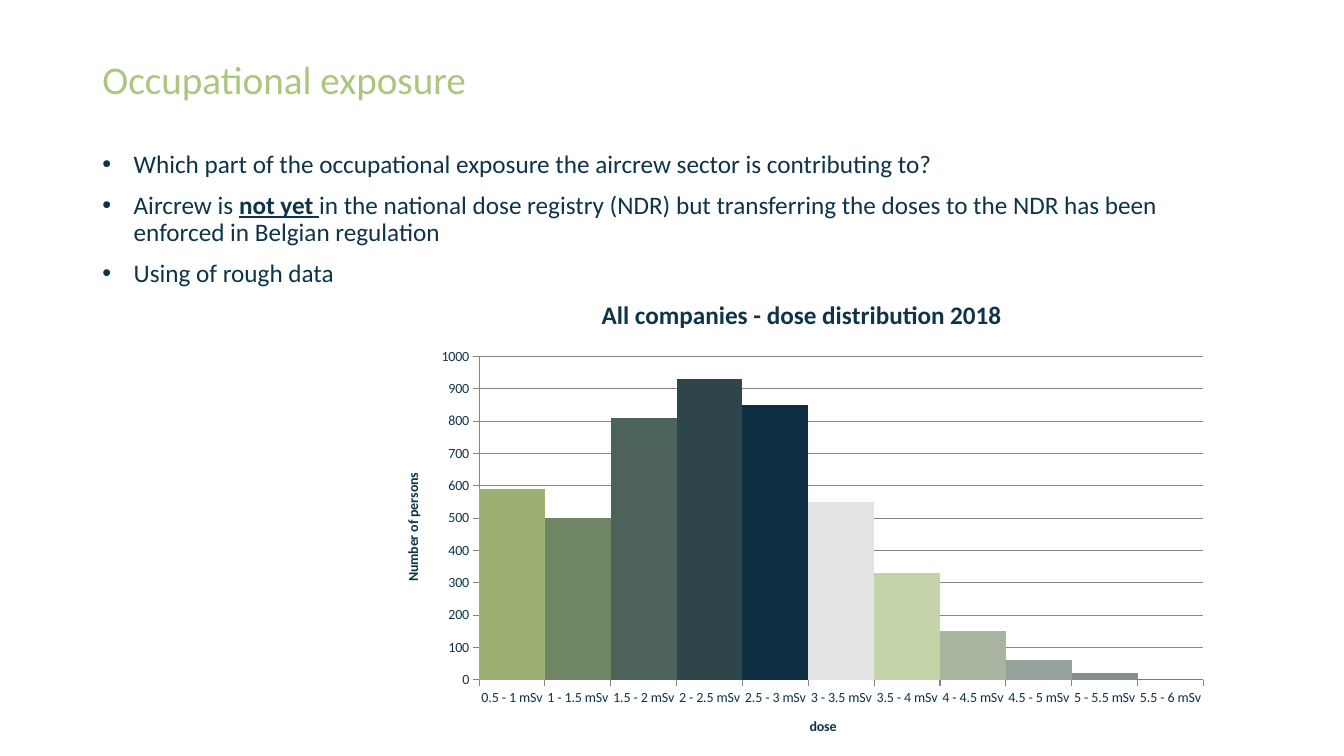
"""Build the slide on occupational exposure of aircrew."""
from lxml import etree
from pptx import Presentation, util as u
from pptx.chart.data import CategoryChartData
from pptx.dml.color import RGBColor
from pptx.enum import chart as ch
from pptx.oxml import parse_xml
from pptx.oxml.ns import nsdecls, qn

FONT, NAVY, LIME, GRAY = "Calibri", "0E3449", "ADC67F", "868686"
HEAD = "Occupational exposure"
POINTS = [
    [("Which part of the occupational exposure the aircrew sector is contributing to?", False)],
    [("Aircrew is ", False), ("not yet ", True),
     ("in the national dose registry (NDR) but transferring the doses to the NDR "
      "has been enforced in Belgian regulation", False)],
    [("Using of rough data", False)],
]
DOSES = [
    ("0.5 - 1 mSv", 590, "9BB072"), ("1 - 1.5 mSv", 500, "718664"),
    ("1.5 - 2 mSv", 810, "4D6259"), ("2 - 2.5 mSv", 930, "2E454C"),
    ("2.5 - 3 mSv", 850, "0C2E40"), ("3 - 3.5 mSv", 550, "E3E3E3"),
    ("3.5 - 4 mSv", 330, "C5D4A8"), ("4 - 4.5 mSv", 150, "A8B4A0"),
    ("4.5 - 5 mSv", 60, "96A19B"), ("5 - 5.5 mSv", 20, "868F8F"),
    ("5.5 - 6 mSv", 0, NAVY),
]


def paint(font, size, color, bold=False):
    font.name, font.size, font.bold = FONT, u.Pt(size), bold
    font.color.rgb = RGBColor.from_string(color)


def write(slide, box, paras, size, color, bullet=False):
    frame = slide.shapes.add_textbox(*map(u.Cm, box)).text_frame
    frame.word_wrap = True
    for i, runs in enumerate(paras):
        para = frame.paragraphs[0] if i == 0 else frame.add_paragraph()
        para.line_spacing = 0.9
        if i:
            para.space_before = u.Pt(10)
        if bullet:
            props = para._p.get_or_add_pPr()
            props.set("marL", str(u.Cm(0.79)))
            props.set("indent", str(-u.Cm(0.79)))
            etree.SubElement(props, qn("a:buFont")).set("typeface", "Arial")
            etree.SubElement(props, qn("a:buChar")).set("char", "•")
        for words, strong in runs:
            run = para.add_run()
            run.text = words
            paint(run.font, size, color, strong)
            run.font.underline = strong


def layout(left, top, size=None):
    tags = [("xMode", "edge"), ("yMode", "edge"), ("x", left), ("y", top)]
    if size:
        tags = [("layoutTarget", "inner")] + tags + [("w", size[0]), ("h", size[1])]
    body = "".join(f'<c:{name} val="{val}"/>' for name, val in tags)
    return parse_xml(f'<c:layout {nsdecls("c")}><c:manualLayout>{body}</c:manualLayout></c:layout>')


def label(title, words, size, left, top):
    run = title.text_frame.paragraphs[0].add_run()
    run.text = words
    paint(run.font, size, NAVY, True)
    root = title._element
    for old in root.findall(qn("c:layout")):
        root.remove(old)
    root.find(qn("c:tx")).addnext(layout(left, top))


def graph(slide, box):
    data = CategoryChartData()
    data.categories = [dose for dose, _, _ in DOSES]
    data.add_series("Series 1", [count for _, count, _ in DOSES])
    chart = slide.shapes.add_chart(
        ch.XL_CHART_TYPE.COLUMN_CLUSTERED, *map(u.Cm, box), data).chart
    paint(chart.font, 10, NAVY)
    chart.has_legend = False
    chart.has_title = True
    label(chart.chart_title, "All companies - dose distribution 2018", 18, 0.256, 0.031)
    plot = chart.plots[0]
    plot.gap_width, plot.vary_by_categories = 0, False
    for i, (_, _, color) in enumerate(DOSES):
        fill = plot.series[0].points[i].format.fill
        fill.solid()
        fill.fore_color.rgb = RGBColor.from_string(color)
    across, up = chart.category_axis, chart.value_axis
    label(across.axis_title, "dose", 10, 0.507, 0.914)
    label(up.axis_title, "Number of persons", 10, 0.022, 0.402)
    up.minimum_scale, up.maximum_scale, up.major_unit = 0, 1000, 100
    up.has_major_gridlines = True
    for part in (across, up, up.major_gridlines):
        part.format.line.color.rgb = RGBColor.from_string(GRAY)
        part.format.line.width = u.Pt(0.75)
    for axis in (across, up):
        axis.major_tick_mark = ch.XL_TICK_MARK.OUTSIDE
        paint(axis.tick_labels.font, 10, NAVY)
    area = chart._chartSpace.chart.plotArea
    for old in area.findall(qn("c:layout")):
        area.remove(old)
    area.insert(0, layout(0.115, 0.164, (0.866, 0.677)))


def main():
    deck = Presentation()
    deck.slide_width, deck.slide_height = u.Cm(33.87), u.Cm(19.05)
    slide = deck.slides.add_slide(deck.slide_layouts[6])
    write(slide, (2.33, 1.4, 22.45, 1.32), [[(HEAD, False)]], 28, LIME)
    write(slide, (2.33, 3.69, 29.21, 12.93), POINTS, 18, NAVY, True)
    graph(slide, (9.65, 7.01, 21.08, 12.04))
    deck.save("out.pptx")


if __name__ == "__main__":
    main()
